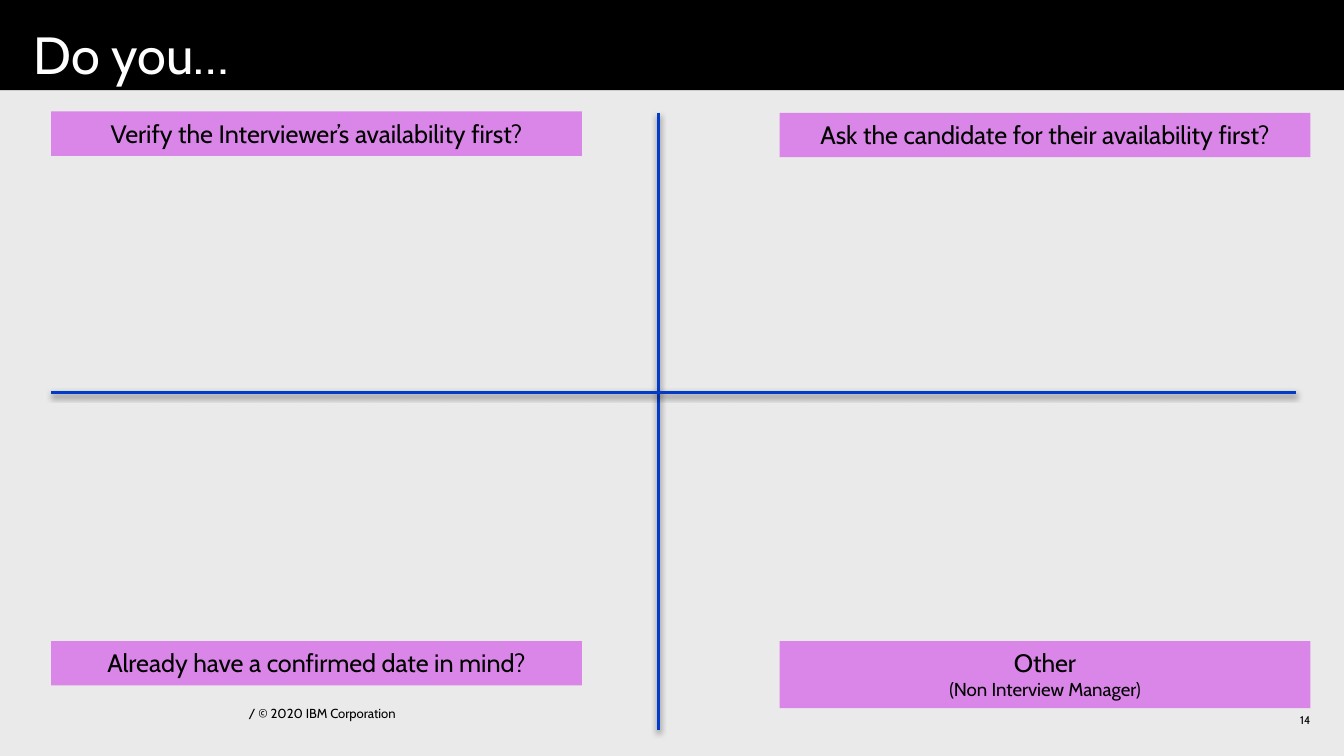
"""Build a four-quadrant question slide about scheduling interviews."""
from dataclasses import dataclass

from lxml import etree
from pptx import Presentation
from pptx.dml.color import RGBColor
from pptx.enum.shapes import MSO_CONNECTOR, MSO_SHAPE
from pptx.enum.text import MSO_ANCHOR, MSO_AUTO_SIZE, PP_ALIGN
from pptx.oxml.ns import qn
from pptx.util import Inches, Pt

LEFT, CENTER, RIGHT = PP_ALIGN.LEFT, PP_ALIGN.CENTER, PP_ALIGN.RIGHT
TOP, MIDDLE = MSO_ANCHOR.TOP, MSO_ANCHOR.MIDDLE
FIXED_SIZE, GROW = MSO_AUTO_SIZE.NONE, MSO_AUTO_SIZE.SHAPE_TO_FIT_TEXT
RECTANGLE, STRAIGHT = MSO_SHAPE.RECTANGLE, MSO_CONNECTOR.STRAIGHT
TITLE_ONLY = 5


@dataclass(frozen=True)
class Theme:
    """Colours, font and type sizes of the slide."""
    font: str = "Cabin"
    background: str = "EAEAEA"
    band: str = "000000"
    title: str = "FFFFFF"
    text: str = "000000"
    label: str = "DA85E8"
    axis: str = "003BC9"
    title_size: float = 28
    label_size: float = 13.5
    detail_size: float = 10
    footer_size: float = 7
    number_size: float = 6


def paint(fill, color):
    """Give a fill one solid colour."""
    fill.solid()
    fill.fore_color.rgb = RGBColor.from_string(color)


def write(frame, lines, *, font, color, align=LEFT, anchor=TOP, margins=(0, 0, 0, 0),
          auto_size=FIXED_SIZE, spacing=None):
    """Write (text, size) lines into a text frame."""
    frame.word_wrap = True
    frame.auto_size = auto_size
    frame.vertical_anchor = anchor
    (frame.margin_left, frame.margin_top,
     frame.margin_right, frame.margin_bottom) = map(Inches, margins)
    for index, (text, size) in enumerate(lines):
        paragraph = frame.add_paragraph() if index else frame.paragraphs[0]
        paragraph.alignment = align
        paragraph.line_spacing = spacing
        run = paragraph.add_run()
        run.text = text
        run.font.name = font
        run.font.size = Pt(size)
        run.font.color.rgb = RGBColor.from_string(color)


class QuadrantSlide:
    """Hold the theme and the slide, and draw each kind of element."""

    def __init__(self, slide, theme):
        """Start with a plain background."""
        self.slide, self.theme = slide, theme
        paint(slide.background.fill, theme.background)

    def title(self, text, width, height):
        """Put the title in a dark band across the top."""
        shape = self.slide.shapes.title
        shape.left, shape.top = Inches(0), Inches(0)
        shape.width, shape.height = Inches(width), Inches(height)
        paint(shape.fill, self.theme.band)
        write(shape.text_frame, [(text, self.theme.title_size)], font=self.theme.font,
              color=self.theme.title, margins=(0.25, 0.22, 0.25, 0.25), spacing=0.9)

    def axis(self, start, end):
        """Draw a dividing line with a soft shadow below it."""
        line = self.slide.shapes.add_connector(STRAIGHT, *map(Inches, start + end))
        line.line.color.rgb = RGBColor.from_string(self.theme.axis)
        line.line.width = Pt(2)
        effects = etree.SubElement(line._element.spPr, qn("a:effectLst"))
        shadow = etree.SubElement(
            effects, qn("a:outerShdw"), blurRad=str(Pt(3.1)), dist=str(Pt(1.6)),
            dir="5400000", rotWithShape="0")
        color = etree.SubElement(shadow, qn("a:srgbClr"), val="000000")
        etree.SubElement(color, qn("a:alpha"), val="38000")

    def label(self, left, top, height, text, detail=None):
        """Draw a quadrant label with an optional smaller second line."""
        shape = self.slide.shapes.add_shape(
            RECTANGLE, *map(Inches, (left, top, 3.95, height)))
        shape.shadow.inherit = False
        paint(shape.fill, self.theme.label)
        shape.line.fill.background()
        lines = [(text, self.theme.label_size)]
        if detail:
            lines.append((detail, self.theme.detail_size))
        write(shape.text_frame, lines, font=self.theme.font, color=self.theme.text,
              align=CENTER, margins=(0.1, 0.05, 0.1, 0.05), auto_size=GROW)

    def footer(self, box, text, size, align=LEFT):
        """Add a line of small print."""
        shape = self.slide.shapes.add_textbox(*map(Inches, box))
        write(shape.text_frame, [(text, size)], font=self.theme.font,
              color=self.theme.text, align=align, anchor=MIDDLE)


def main():
    """Compose and save the slide."""
    presentation = Presentation()
    presentation.slide_width = Inches(10)
    presentation.slide_height = presentation.slide_width * 9 // 16
    slide = presentation.slides.add_slide(presentation.slide_layouts[TITLE_ONLY])
    theme = Theme()
    page = QuadrantSlide(slide, theme)

    page.footer((1.85, 5.23, 2.76, 0.15), "/ © 2020 IBM Corporation", theme.footer_size)
    page.footer((7.5, 5.28, 2.25, 0.15), "14", theme.number_size, RIGHT)
    page.title("Do you…", 10, 0.67)
    page.axis((4.9, 0.84), (4.9, 5.43))
    page.axis((9.64, 2.92), (0.38, 2.92))

    left, right, upper, lower = 0.38, 5.8, 0.83, 4.77
    page.label(left, upper, 0.33, "Verify the Interviewer’s availability first?")
    page.label(left, lower, 0.33, "Already have a confirmed date in mind?")
    page.label(right, lower, 0.5, "Other", "(Non Interview Manager)")
    page.label(right, 0.84, 0.33, "Ask the candidate for their availability first?")
    presentation.save("out.pptx")


if __name__ == "__main__":
    main()
